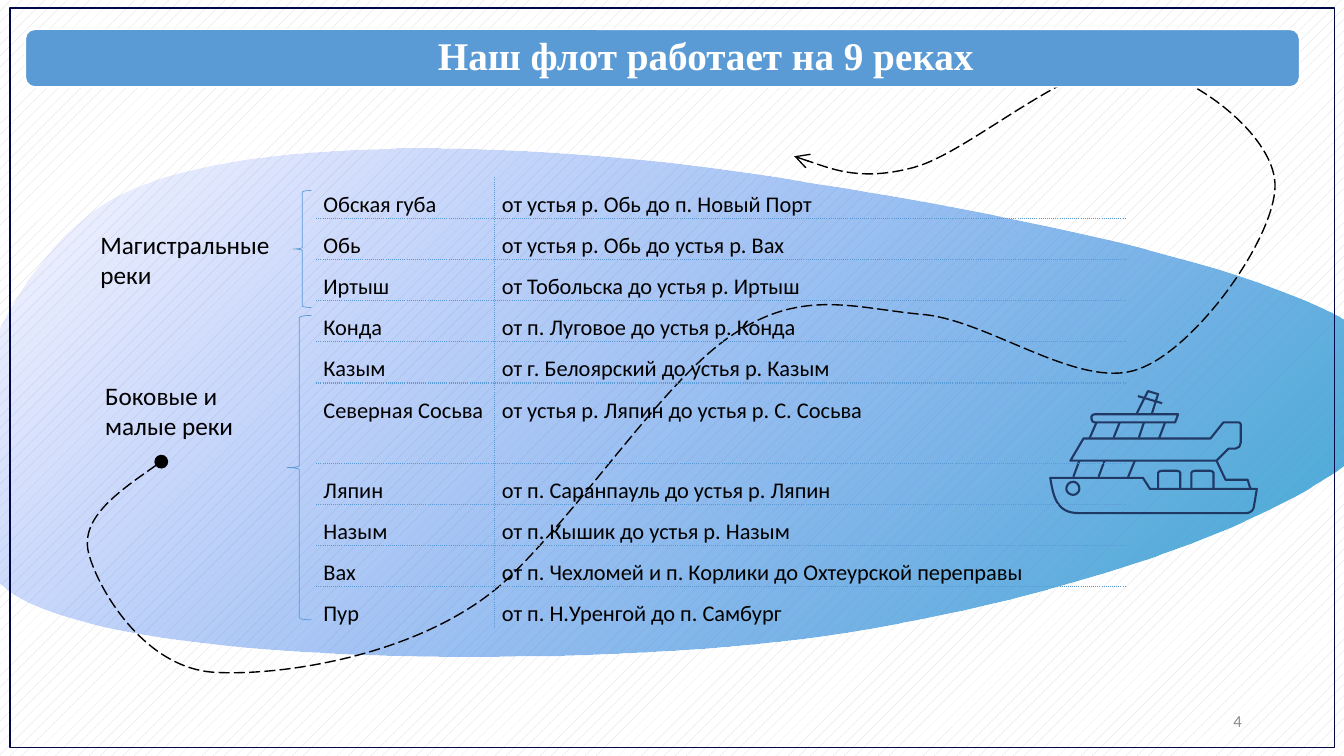
from lxml import etree
from pptx import Presentation
from pptx.dml.color import RGBColor
from pptx.enum import dml, shapes, text
from pptx.oxml import ns
from pptx.util import Cm, Pt

BLACK = RGBColor(0x00, 0x00, 0x00)
WHITE = RGBColor(0xFF, 0xFF, 0xFF)
GRAY = RGBColor(0x8C, 0x8C, 0x8C)
HATCH = RGBColor(0xD9, 0xD9, 0xD9)
BLUE = RGBColor(0x5B, 0x9B, 0xD5)
NAVY = RGBColor(0x20, 0x38, 0x64)
FRAME = RGBColor(0x00, 0x08, 0x47)
WAVE_START = RGBColor(0x3B, 0x5C, 0xFF)
WAVE_END = RGBColor(0x39, 0xAA, 0xCD)

TITLE = "Наш флот работает на 9 реках"
PAGE_NUMBER = "4"
RIVERS = [
    ("Обская губа", "от устья р. Обь до п. Новый Порт"),
    ("Обь", "от устья р. Обь до устья р. Вах"),
    ("Иртыш", "от Тобольска до устья р. Иртыш"),
    ("Конда", "от п. Луговое до устья р. Конда"),
    ("Казым", "от г. Белоярский до устья р. Казым"),
    ("Северная Сосьва", "от устья р. Ляпин до устья р. С. Сосьва"),
    ("Ляпин", "от п. Саранпауль до устья р. Ляпин"),
    ("Назым", "от п. Кышик до устья р. Назым"),
    ("Вах", "от п. Чехломей и п. Корлики до Охтеурской переправы"),
    ("Пур", "от п. Н.Уренгой до п. Самбург"),
]
TALL_ROW = 5
COLUMN_WIDTHS = (4.5, 15.88)
ROW_HEIGHT, TALL_HEIGHT = 1.01, 2.02
GROUPS = [
    ("Магистральные реки", (2.28, 5.66, 5.49, 1.8), (7.39, 4.8, 0.46, 2.95)),
    ("Боковые и малые реки", (2.4, 9.45, 4.55, 1.8), (7.24, 7.95, 0.61, 7.67)),
]

UNIT = Cm(0.0254)
EXTENT_STEPS = 24
WAVE = [(1390, 390), (1415, 282, 958, 204, 745, 172), (531, 140, 232, 129, 110, 198),
        (-11, 268, -102, 518, 16, 590), (134, 662, 590, 663, 819, 630),
        (1048, 597, 1365, 499, 1390, 390)]
ROUTE = [(160, 458), (120, 486, 79, 514, 88, 549), (97, 584, 143, 663, 213, 667),
         (282, 671, 426, 649, 506, 572), (585, 495, 662, 373, 730, 330),
         (798, 286, 849, 306, 916, 312), (982, 318, 1072, 388, 1130, 366),
         (1188, 345, 1267, 233, 1265, 182), (1263, 132, 1178, 67, 1118, 64),
         (1059, 61, 962, 151, 907, 166), (852, 181, 788, 155, 788, 155), (788, 155)]
STRUTS = [(1071, 457, 1065, 473), (1096, 457, 1090, 473), (1126, 457, 1119, 474),
          (1156, 419, 1150, 435), (1088, 419, 1081, 435), (1111, 419, 1105, 434),
          (1135, 419, 1130, 434), (1129, 393, 1153, 400)]
WINDOW_LEFTS = (1149, 1182)
STERN = [(1241, 485), (1240, 483), (1238, 476), (1216, 476), (1207, 457)]
FUNNEL = [(1143, 410), (1149, 391), (1139, 388), (1128, 410)]
ROOF = [(1083, 416), (1083, 418, 1085, 419, 1086, 419), (1166, 419), (1169, 411),
        (1086, 411), (1085, 411, 1083, 412, 1083, 413), (1083, 416)]
CABIN = [(1062, 457), (1207, 457), (1219, 445), (1226, 445),
         (1229, 445, 1231, 442, 1231, 439), (1231, 421),
         (1231, 420, 1230, 419, 1229, 419), (1214, 419),
         (1214, 419, 1213, 419, 1213, 420), (1201, 435), (1075, 435), (1062, 457)]
HULL = [(1134, 474), (1141, 485), (1247, 485), (1244, 503),
        (1244, 506, 1240, 509, 1237, 509), (1070, 509),
        (1048, 509, 1045, 492, 1042, 474), (1134, 474)]
PORTHOLE = [(1058, 485), (1058, 488, 1061, 491, 1065, 491),
            (1068, 491, 1071, 488, 1071, 485), (1071, 481, 1068, 478, 1065, 478),
            (1061, 478, 1058, 481, 1058, 485)]


def window(left):
    right = left + 22
    return [(right, 484), (right, 469), (right, 468, right - 2, 467, right - 4, 467),
            (left + 4, 467), (left + 2, 467, left, 468, left, 469), (left, 484)]


def trace(outline):
    points = [outline[0]]
    for step in outline[1:]:
        if len(step) == 2:
            points.append(step)
            continue
        start, one, two, end = points[-1], step[:2], step[2:4], step[4:]
        for i in range(1, EXTENT_STEPS + 1):
            t = i / EXTENT_STEPS
            s = 1 - t
            points.append(tuple(
                s**3 * a + 3 * s * s * t * b + 3 * s * t * t * c + t**3 * d
                for a, b, c, d in zip(start, one, two, end)))
    return [(x * UNIT, y * UNIT) for x, y in points]


def style(shape, fill=None, line=None, width=1):
    shape.shadow.inherit = False
    if fill is None:
        shape.fill.background()
    else:
        shape.fill.solid()
        shape.fill.fore_color.rgb = fill
    if line is None:
        shape.line.fill.background()
    else:
        shape.line.color.rgb = line
        shape.line.width = Pt(width)
    return shape


def draw(parent, outline, **look):
    points = trace(outline)
    builder = parent.build_freeform(*points[0], scale=1.0)
    builder.add_line_segments(points[1:], close=False)
    shape = builder.convert_to_shape()
    contour = next(shape.element.iter(ns.qn("a:path")))
    for child in list(contour):
        contour.remove(child)
    for i, step in enumerate(outline):
        kind = "moveTo" if i == 0 else "lnTo" if len(step) == 2 else "cubicBezTo"
        command = etree.SubElement(contour, ns.qn(f"a:{kind}"))
        for x, y in zip(step[::2], step[1::2]):
            etree.SubElement(command, ns.qn("a:pt"), x=str(x * UNIT - shape.left),
                             y=str(y * UNIT - shape.top))
    if outline[0] == outline[-1][-2:]:
        etree.SubElement(contour, ns.qn("a:close"))
    return style(shape, **look)


def write(frame, words, size=18, color=BLACK, font="Calibri", bold=False,
          align=text.PP_ALIGN.LEFT, spacing=1.0):
    para = frame.paragraphs[0]
    para.alignment = align
    para.line_spacing = spacing
    span = para.add_run()
    span.text = words
    span.font.size = Pt(size)
    span.font.name = font
    span.font.bold = bold
    span.font.color.rgb = color


def place(box):
    return [Cm(value) for value in box]


def set_borders(cell, inner_sides):
    props = cell._tc.get_or_add_tcPr()
    for index, side in enumerate("LRTB"):
        edge = etree.Element(ns.qn(f"a:ln{side}"), w=str(Pt(1)))
        if side in inner_sides:
            fill = etree.SubElement(edge, ns.qn("a:solidFill"))
            etree.SubElement(fill, ns.qn("a:srgbClr"), val=str(BLUE))
            etree.SubElement(edge, ns.qn("a:prstDash"), val="sysDot")
        else:
            etree.SubElement(edge, ns.qn("a:noFill"))
        props.insert(index, edge)


def add_rivers(page):
    heights = [TALL_HEIGHT if i == TALL_ROW else ROW_HEIGHT for i in range(len(RIVERS))]
    box = place((7.97, 4.47, sum(COLUMN_WIDTHS), sum(heights)))
    table = page.shapes.add_table(len(RIVERS), len(COLUMN_WIDTHS), *box).table
    table.first_row = table.horz_banding = False
    for column, width in zip(table.columns, COLUMN_WIDTHS):
        column.width = Cm(width)
    for r, (row, height, river) in enumerate(zip(table.rows, heights, RIVERS)):
        row.height = Cm(height)
        for c, (cell, words) in enumerate(zip(row.cells, river)):
            cell.margin_left = cell.margin_right = Cm(0.18)
            cell.margin_top = cell.margin_bottom = 0
            cell.fill.background()
            sides = ("R" if c == 0 else "L") + "T" * (r > 0) + "B" * (r < len(RIVERS) - 1)
            set_borders(cell, sides)
            write(cell.text_frame, words, size=16, align=text.PP_ALIGN.JUSTIFY, spacing=1.5)


def main():
    deck = Presentation()
    deck.slide_width, deck.slide_height = Cm(33.87), Cm(19.05)
    page = deck.slides.add_slide(deck.slide_layouts[5])
    backdrop = page.background.fill
    backdrop.patterned()
    backdrop.pattern = dml.MSO_PATTERN.PERCENT_10
    backdrop.fore_color.rgb, backdrop.back_color.rgb = HATCH, WHITE

    wave = draw(page.shapes, WAVE)
    wave.fill.gradient()
    wave.fill.gradient_angle = 315
    for stop, color, position in zip(wave.fill.gradient_stops, (WAVE_START, WAVE_END), (0, 1)):
        stop.color.rgb, stop.position = color, position
    first_color = next(wave.element.iter(ns.qn("a:srgbClr")))
    etree.SubElement(first_color, ns.qn("a:alpha"), val="1000")

    ship = page.shapes.add_group_shape()
    struts = [[strut[:2], strut[2:]] for strut in STRUTS]
    windows = [window(left) for left in WINDOW_LEFTS]
    for outline in struts + windows + [STERN, FUNNEL, ROOF, CABIN, HULL, PORTHOLE]:
        draw(ship.shapes, outline, line=NAVY, width=1.5)

    route = draw(page.shapes, ROUTE, line=BLACK)
    route.line.dash_style = dml.MSO_LINE.LONG_DASH
    stroke = route.element.spPr.find(ns.qn("a:ln"))
    for end, kind in (("headEnd", "oval"), ("tailEnd", "arrow")):
        etree.SubElement(stroke, ns.qn(f"a:{end}"), type=kind, w="lg", len="lg")

    add_rivers(page)
    preset = shapes.MSO_SHAPE
    frame = page.shapes.add_shape(preset.ROUNDED_RECTANGLE, *place((0.25, 0.2, 33.38, 18.64)))
    frame.adjustments[0] = 0
    style(frame, line=FRAME)
    for name, label_box, brace_box in GROUPS:
        label = page.shapes.add_textbox(*place(label_box)).text_frame
        label.word_wrap = True
        write(label, name)
        brace = page.shapes.add_shape(preset.LEFT_BRACE, *place(brace_box))
        style(brace, line=BLUE, width=0.5)

    number = page.shapes.add_textbox(*place((23.93, 17.65, 7.62, 1.02))).text_frame
    number.word_wrap = True
    number.vertical_anchor = text.MSO_ANCHOR.MIDDLE
    write(number, PAGE_NUMBER, size=12, color=GRAY, align=text.PP_ALIGN.RIGHT)

    bar = page.shapes.add_shape(preset.ROUNDED_RECTANGLE, *place((0.64, 0.74, 32.11, 1.45)))
    style(bar, fill=BLUE, line=WHITE)
    title = page.shapes.title
    title.left, title.top, title.width, title.height = place((0.97, 0.79, 31.95, 1.32))
    heading = title.text_frame
    heading.auto_size = text.MSO_AUTO_SIZE.NONE
    heading.vertical_anchor = text.MSO_ANCHOR.MIDDLE
    heading.margin_left = Cm(1.93)
    heading.margin_right = heading.margin_top = heading.margin_bottom = Cm(0.25)
    write(heading, TITLE, size=28, color=WHITE, font="Times New Roman", bold=True,
          align=text.PP_ALIGN.CENTER, spacing=0.9)
    bar.element.addnext(title.element)
    deck.save("out.pptx")


if __name__ == "__main__":
    main()
